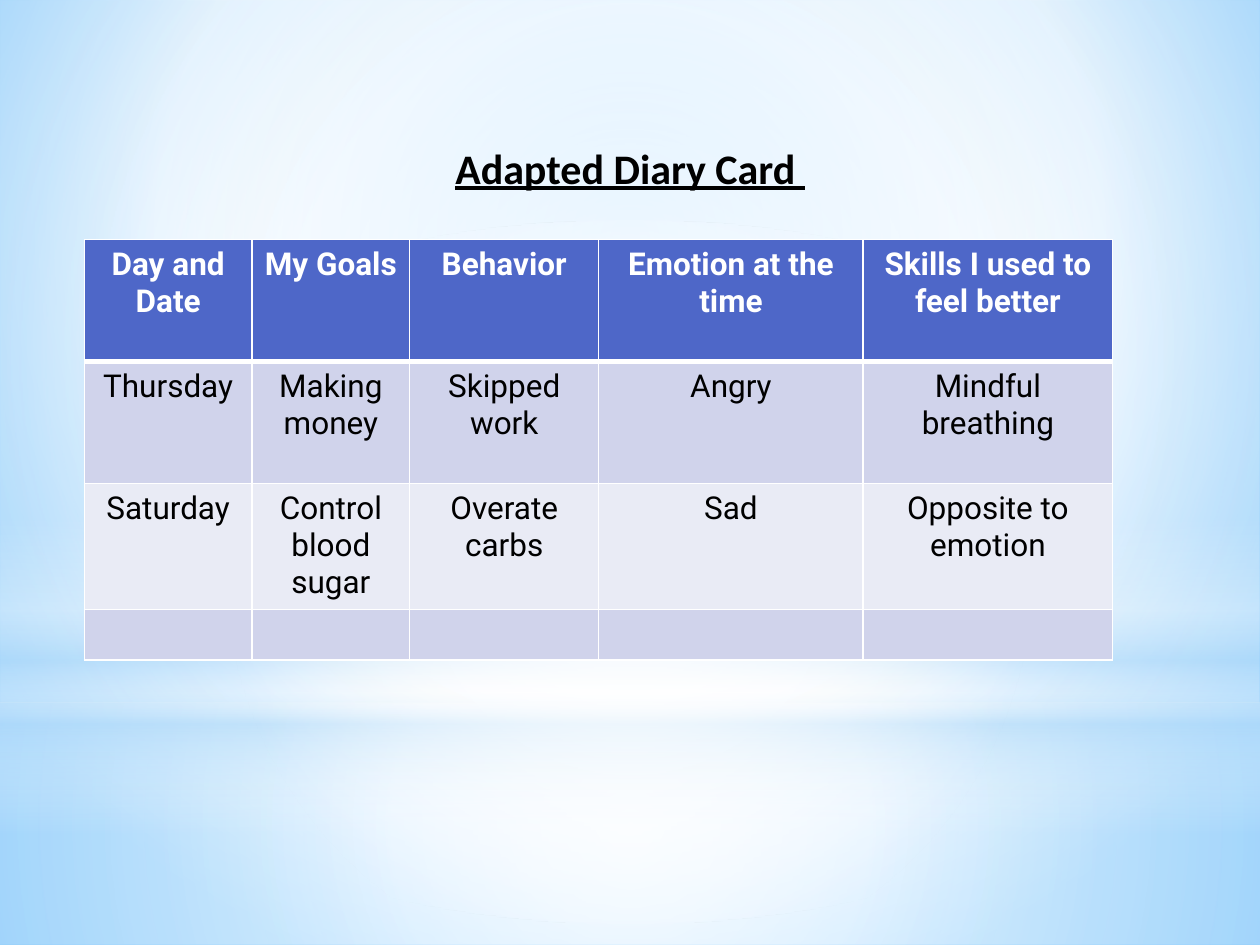
import pptx
import pptx.util
import pptx.dml.color
import pptx.enum.shapes
import pptx.enum.text
import pptx.oxml.ns
from lxml import etree

Cm, Pt = pptx.util.Cm, pptx.util.Pt
qn = pptx.oxml.ns.qn
rgb = pptx.dml.color.RGBColor.from_string
RECTANGLE = pptx.enum.shapes.MSO_SHAPE.RECTANGLE
OVAL = pptx.enum.shapes.MSO_SHAPE.OVAL
CENTER = pptx.enum.text.PP_ALIGN.CENTER
MIDDLE_FOCUS = (50, 50, 50, 50)


def set_gradient(fill, owner, stops, focus):
    """Fill with (position, colour, opacity) stops in percent.

    focus gives the left, top, right and bottom insets of a circular
    gradient; None makes the gradient run from top to bottom.
    """
    fill.gradient()
    gradient = owner.find(".//" + qn("a:gradFill"))
    for child in list(gradient):
        gradient.remove(child)
    stop_list = etree.SubElement(gradient, qn("a:gsLst"))
    for position, colour, opacity in stops:
        stop = etree.SubElement(stop_list, qn("a:gs"), pos=str(position * 1000))
        tint = etree.SubElement(stop, qn("a:srgbClr"), val=colour)
        etree.SubElement(tint, qn("a:alpha"), val=str(opacity * 1000))
    if focus is None:
        etree.SubElement(gradient, qn("a:lin"), ang="5400000", scaled="0")
    else:
        circle = etree.SubElement(gradient, qn("a:path"), path="circle")
        insets = {side: str(inset * 1000) for side, inset in zip("ltrb", focus)}
        etree.SubElement(circle, qn("a:fillToRect"), **insets)


def set_borders(cell, bottom_width):
    """Draw white cell borders, 1 pt wide except for the bottom one."""
    properties = cell._tc.get_or_add_tcPr()
    widths = {"a:lnL": 1, "a:lnR": 1, "a:lnT": 1, "a:lnB": bottom_width}
    for index, (tag, width) in enumerate(widths.items()):
        border = etree.Element(qn(tag), w=str(Pt(width)))
        solid = etree.SubElement(border, qn("a:solidFill"))
        etree.SubElement(solid, qn("a:srgbClr"), val="FFFFFF")
        properties.insert(index, border)


presentation = pptx.Presentation()
presentation.slide_width, presentation.slide_height = Cm(25.4), Cm(19.05)
slide = presentation.slides.add_slide(presentation.slide_layouts[5])

# Sky and water backdrop
set_gradient(
    slide.background.fill, slide._element,
    [(0, "9ED5FF", 100), (60, "FFFFFF", 100), (100, "5BB9FF", 100)],
    (20, 10, 20, 60),
)
backdrop = [  # shape, top, height, stops, focus
    (RECTANGLE, 14.17, 4.88,
     [(0, "FFFFFF", 91), (37, "FFFFFF", 76), (100, "B4DCFA", 79)], MIDDLE_FOCUS),
    (RECTANGLE, 0, 14.17,
     [(0, "FFFFFF", 89), (48, "FFFFFF", 62), (100, "B4DCFA", 79)], MIDDLE_FOCUS),
    (RECTANGLE, 10.46, 6.35,
     [(0, "FFFFFF", 0), (29, "FFFFFF", 30), (45, "B4DCFA", 40),
      (55, "FFFFFF", 26), (65, "B4DCFA", 60), (100, "FFFFFF", 0)], None),
    (OVAL, 4.45, 14.17, [(0, "FFFFFF", 100), (56, "FFFFFF", 0)], MIDDLE_FOCUS),
]
for outline, top, height, stops, focus in backdrop:
    layer = slide.shapes.add_shape(outline, 0, Cm(top), Cm(25.4), Cm(height))
    layer.shadow.inherit = False
    layer.line.fill.background()
    set_gradient(layer.fill, layer._element, stops, focus)

# Heading, brought in front of the backdrop
heading = slide.shapes.title
slide.shapes._spTree.append(heading._element)
heading.left, heading.top = Cm(8.64), Cm(2.74)
heading.width, heading.height = Cm(8.13), Cm(1.27)
heading.text_frame.text = "Adapted Diary Card "
heading.text_frame.word_wrap = False
heading.text_frame.auto_size = pptx.enum.text.MSO_AUTO_SIZE.SHAPE_TO_FIT_TEXT
heading.text_frame.vertical_anchor = pptx.enum.text.MSO_ANCHOR.TOP
heading_line = heading.text_frame.paragraphs[0]
heading_line.alignment = CENTER
heading_line.font.name = "Calibri"
heading_line.font.size = Pt(24)
heading_line.font.bold = True
heading_line.font.underline = True
heading_line.font.color.rgb = rgb("000000")

# Diary table
diary_rows = [
    ["Day and Date", "My Goals", "Behavior", "Emotion at the time",
     "Skills I used to feel better"],
    ["Thursday", "Making money", "Skipped work", "Angry", "Mindful breathing"],
    ["Saturday", "Control blood sugar", "Overate carbs", "Sad", "Opposite to emotion"],
    [""] * 5,
]
column_widths = [3.38, 3.18, 3.81, 5.33, 5.03]
row_heights = [2.46, 2.46, 2.46, 0.99]
row_fills = ["4E67C8", "D0D3EB", "E9EBF5", "D0D3EB"]

diary = slide.shapes.add_table(
    len(diary_rows), len(column_widths), Cm(1.7), Cm(4.83),
    Cm(sum(column_widths)), Cm(sum(row_heights)),
).table
for column, width in zip(diary.columns, column_widths):
    column.width = Cm(width)
for row_index, entries in enumerate(diary_rows):
    is_header = row_index == 0
    diary.rows[row_index].height = Cm(row_heights[row_index])
    for column_index, entry in enumerate(entries):
        cell = diary.cell(row_index, column_index)
        cell.text = entry
        cell.fill.solid()
        cell.fill.fore_color.rgb = rgb(row_fills[row_index])
        set_borders(cell, 3 if is_header else 1)
        cell_line = cell.text_frame.paragraphs[0]
        cell_line.alignment = CENTER
        cell_line.font.name = "Roboto"
        cell_line.font.size = Pt(18)
        cell_line.font.bold = is_header
        cell_line.font.color.rgb = rgb("FFFFFF" if is_header else "000000")

presentation.save("out.pptx")
